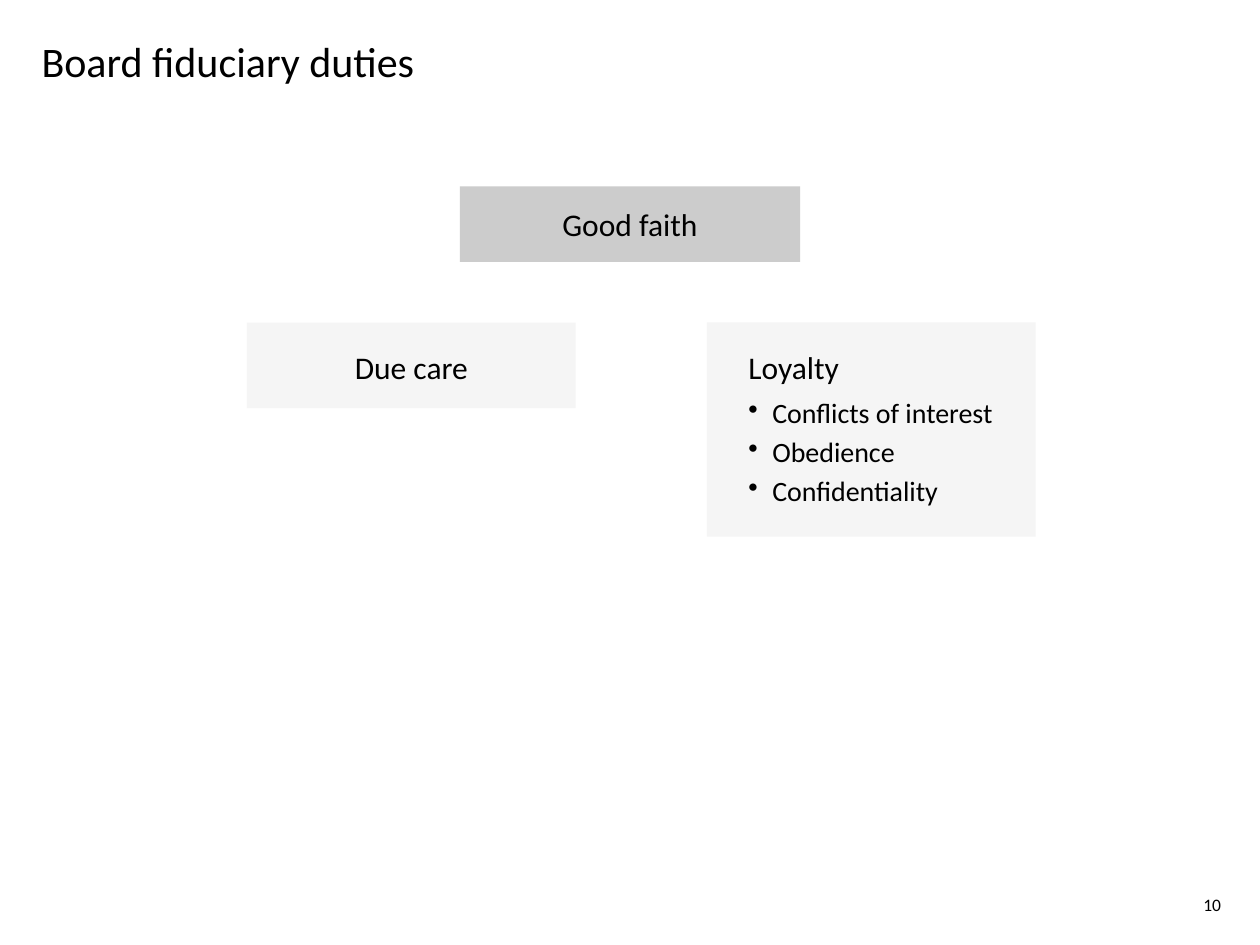
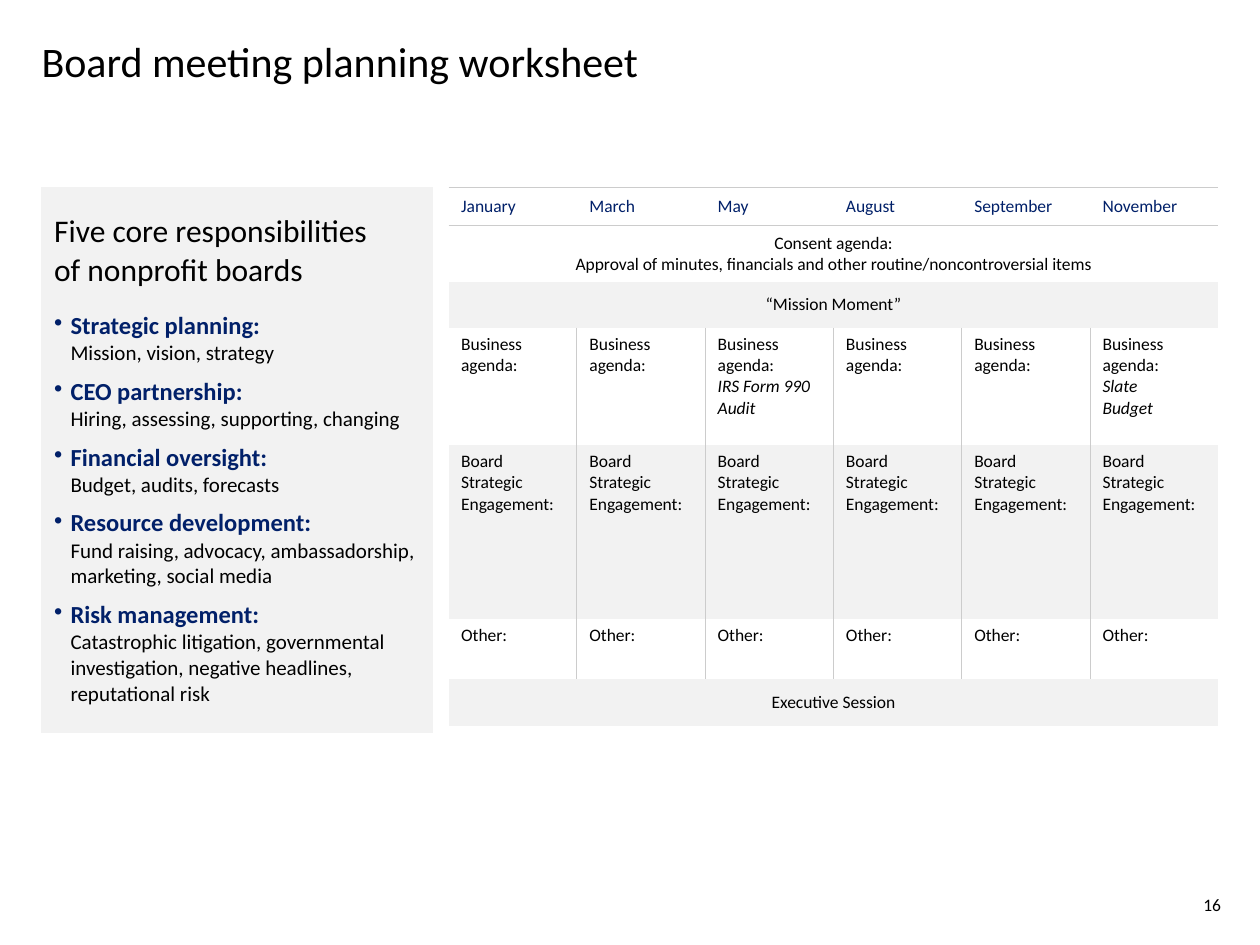
from copy import deepcopy
from dataclasses import dataclass

from lxml.etree import SubElement as Sub
from pptx import Presentation
from pptx.dml.color import RGBColor as Rgb
from pptx.enum.shapes import MSO_SHAPE as Kind
from pptx.enum.text import MSO_ANCHOR as Anchor, PP_ALIGN as Align
from pptx.oxml.ns import qn
from pptx.util import Emu, Inches, Pt


@dataclass(frozen=True)
class Theme:
    face: str = "Calibri"
    ink: str = "000000"
    navy: str = "012069"
    rule: str = "CCCCCC"
    band: str = "F2F2F2"
    pale: str = "F5F5F5"
    title: int = 24
    head: int = 18
    item: int = 16
    topic: int = 14
    note: int = 12
    small: int = 10


T = Theme()
MID = {"alignment": Align.CENTER}
SIDES = "LRTB"


def run(text, size, color=T.ink, **font):
    return text, color, {"name": T.face, "size": Pt(size), **font}


def par(*runs, hang=0, **fmt):
    """A paragraph; hang is the depth of its bullet in inches."""
    return runs, hang, fmt


def put(thing, fmt):
    for key, val in fmt.items():
        setattr(thing, key, val)


class Deck:
    COLS, ROWS = 100, 75

    def __init__(self):
        self.prs = Presentation()
        put(self.prs, {"slide_width": Inches(10), "slide_height": Inches(7.5)})
        self.unit_x = self.prs.slide_width / self.COLS
        self.unit_y = self.prs.slide_height / self.ROWS

    def x(self, cols):
        return Emu(round(cols * self.unit_x))

    def y(self, rows):
        return Emu(round(rows * self.unit_y))

    def area(self, left, top, wide, high):
        return self.x(left), self.y(top), self.x(wide), self.y(high)

    # Text
    def pour(self, frame, pars):
        for n, (runs, hang, fmt) in enumerate(pars):
            line = frame.add_paragraph() if n else frame.paragraphs[0]
            if hang:
                props = line._p.get_or_add_pPr()
                props.set("marL", str(Inches(hang)))
                props.set("indent", str(-Inches(hang)))
                Sub(props, qn("a:buChar"), char="•")
            put(line, fmt)
            for text, color, font in runs:
                self.spell(line, text, color, font)

    def spell(self, line, text, color, font):
        for n, part in enumerate(text.split("\n")):
            if n:
                # A break keeps the type size of the run before it
                line.add_line_break()
                line._p[-1].append(deepcopy(bit._r.rPr))
            if part:
                bit = line.add_run()
                bit.text = part
                put(bit.font, font)
                bit.font.color.rgb = Rgb.from_string(color)

    def text(self, area, pars, **fmt):
        frame = self.page.shapes.add_textbox(*self.area(*area)).text_frame
        put(frame, {"word_wrap": True, **fmt})
        self.pour(frame, pars)

    # Slide with title and page number
    def start(self, title, number):
        self.page = self.prs.slides.add_slide(self.prs.slide_layouts[6])
        self.text((93.2, 70.5, 6, 2.5), [par(run(number, T.small), **MID)],
                  vertical_anchor=Anchor.MIDDLE)
        self.text((3.3, 2.3, 93.4, 7.8), [par(run(title, T.title))],
                  margin_left=0, margin_right=0)

    # Filled rectangle
    def box(self, area, fill, pars, **fmt):
        shape = self.page.shapes.add_shape(Kind.RECTANGLE, *self.area(*area))
        shape.shadow.inherit = False
        shape.fill.solid()
        shape.fill.fore_color.rgb = Rgb.from_string(fill)
        shape.line.fill.background()
        put(shape.text_frame, {"word_wrap": True, **fmt})
        self.pour(shape.text_frame, pars)

    # Table grid
    def table(self, left, top, wide, highs, count):
        area = self.area(left, top, wide, sum(highs))
        grid = self.page.shapes.add_table(len(highs), count, *area).table
        put(grid, {"first_row": False, "horz_banding": False})
        for col in grid.columns:
            col.width = self.x(wide / count)
        for row, high in zip(grid.rows, highs):
            row.height = self.y(high)
        return grid

    def cell(self, cell, pars, fill=None, edges="", color=T.rule, **fmt):
        props = cell._tc.get_or_add_tcPr()
        for side in SIDES:
            line = Sub(props, qn("a:ln" + side), w=str(Pt(0.5)))
            if side in edges:
                solid = Sub(line, qn("a:solidFill"))
                Sub(solid, qn("a:srgbClr"), val=color)
            else:
                Sub(line, qn("a:noFill"))
        if fill:
            cell.fill.solid()
            cell.fill.fore_color.rgb = Rgb.from_string(fill)
        else:
            cell.fill.background()
        put(cell, fmt)
        self.pour(cell.text_frame, pars)


def duties(deck):
    deck.start("Board fiduciary duties", "10")
    wide, top = 26.1, 25.6
    inset = {"margin_right": 0, "margin_top": Inches(0.2),
             "vertical_anchor": Anchor.TOP}

    # Loyalty and its parts
    points = ["Conflicts of interest", "Obedience", "Confidentiality"]
    pars = [par(run("Loyalty", T.head), alignment=Align.LEFT, space_after=Pt(6))]
    pars += [par(run(point, T.item), hang=0.19, alignment=Align.LEFT,
                 space_after=Pt(3)) for point in points]
    deck.box((56.1, top, wide, 17), T.pale, pars,
             margin_left=Inches(0.33), **inset)

    # Due care and good faith
    deck.box((19.6, top, wide, 6.8), T.pale,
             [par(run("Due care", T.head), **MID)], margin_left=0, **inset)
    deck.box((36.5, 14.8, 27, 6), T.rule,
             [par(run("Good faith", T.head), **MID)],
             vertical_anchor=Anchor.MIDDLE)


def plan(deck):
    deck.start("Board meeting planning worksheet", "16")
    top = 14.9

    # Meeting calendar
    months = ["January", "March", "May", "August", "September", "November"]
    last = len(months) - 1
    extra = {"May": "IRS Form 990\nAudit", "November": "Slate\nBudget"}
    bars = {1: ("Consent agenda:\nApproval of minutes, financials and other "
                "routine/noncontroversial items", None),
            2: ("“Mission Moment”", T.band), 6: ("Executive Session", T.band)}
    slots = {3: ("Business agenda:", None),
             4: ("Board Strategic Engagement:", T.band), 5: ("Other:", None)}
    grid = deck.table(35.6, top, 61.1, [3, 4.5, 3.6, 9.3, 13.8, 4.8, 3.7],
                      len(months))
    mid = {"vertical_anchor": Anchor.MIDDLE}
    for n, month in enumerate(months):
        deck.cell(grid.cell(0, n), [par(run(month, T.small, T.navy))],
                  edges="TB", **mid)
        sides = ("L" if n else "") + ("R" if n < last else "")
        for row, (label, fill) in slots.items():
            pars = [par(run(label, T.small))]
            if row == 3 and month in extra:
                pars.append(par(run(extra[month], T.small, italic=True)))
            deck.cell(grid.cell(row, n), pars, fill, sides)
    for row, (label, fill) in bars.items():
        grid.cell(row, 0).merge(grid.cell(row, last))
        deck.cell(grid.cell(row, 0), [par(run(label, T.small), **MID)], fill,
                  "T" if row == 1 else "", **mid)

    # Core responsibilities
    roles = {
        "Strategic planning:": "Mission, vision, strategy",
        "CEO partnership:": "Hiring, assessing, supporting, changing",
        "Financial oversight:": "Budget, audits, forecasts",
        "Resource development:":
            "Fund raising, advocacy, ambassadorship, marketing, social media",
        "Risk management:": "Catastrophic litigation, governmental "
            "investigation, negative headlines, reputational risk"}
    pars = [par(run("Five core responsibilities\nof nonprofit boards", T.head),
                space_after=Pt(12))]
    pars += [par(run(role + "\n", T.topic, T.navy, bold=True),
                 run(task, T.note), hang=0.13, space_after=Pt(6))
             for role, task in roles.items()]
    side = deck.table(3.3, top, 31, [43.2], 1)
    deck.cell(side.cell(0, 0), pars, T.band, SIDES, T.band,
              margin_top=Inches(0.2), margin_bottom=Inches(0.2))


def main():
    deck = Deck()
    duties(deck)
    plan(deck)
    deck.prs.save("out.pptx")


if __name__ == "__main__":
    main()
